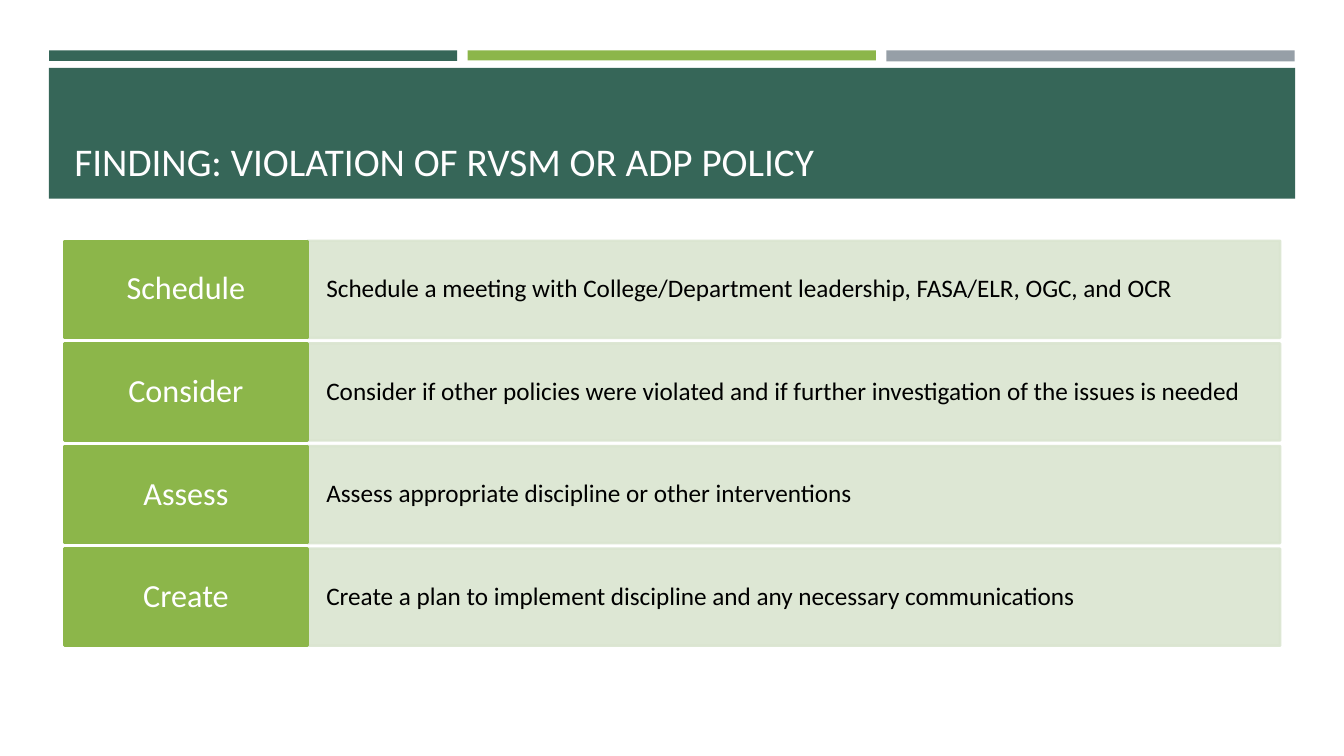
from pptx import Presentation
from pptx.dml.color import RGBColor
from pptx.enum.shapes import MSO_SHAPE
from pptx.enum.text import MSO_ANCHOR, PP_ALIGN
from pptx.oxml.ns import qn
from pptx.util import Pt
from lxml import etree

RECT = MSO_SHAPE.RECTANGLE
MIDDLE, BOTTOM = MSO_ANCHOR.MIDDLE, MSO_ANCHOR.BOTTOM
LEFT, CENTER = PP_ALIGN.LEFT, PP_ALIGN.CENTER

FONT = "Calibri"
DARK, GREEN, GRAY, PALE = "366658", "8CB64A", "969FA7", "DAE5D0"

TITLE = "FINDING: VIOLATION OF RVSM OR ADP POLICY"
STEPS = [
    ("Schedule", "Schedule a meeting with College/Department leadership, "
                 "FASA/ELR, OGC, and OCR"),
    ("Consider", "Consider if other policies were violated and if further "
                 "investigation of the issues is needed"),
    ("Assess", "Assess appropriate discipline or other interventions"),
    ("Create", "Create a plan to implement discipline and any necessary "
               "communications"),
]

TITLE_TEXT = dict(size=28, color="FFFEFF", align=LEFT, anchor=BOTTOM,
                  margins=(7.2, 3.6), spacing=0.9)
LABEL_TEXT = dict(size=23, color="FFFFFF", align=CENTER, anchor=MIDDLE,
                  margins=(9.4, 6.5), spacing=0.9)
DETAIL_TEXT = dict(size=18, color="000000", align=LEFT, anchor=MIDDLE,
                   margins=(13.5, 17.3), spacing=0.9)


def rgb(value):
    return RGBColor.from_string(value)


def add_box(slide, x, y, w, h, fill, outlined=False, opacity=100):
    s = slide.shapes.add_shape(RECT, Pt(x), Pt(y), Pt(w), Pt(h))
    s.shadow.inherit = False
    s.fill.solid()
    s.fill.fore_color.rgb = rgb(fill)
    if outlined:
        s.line.color.rgb = rgb(fill)
        s.line.width = Pt(1.75)
    else:
        s.line.fill.background()
    # Transparency of fill and outline
    if opacity < 100:
        for clr in s._element.spPr.iter(qn("a:srgbClr")):
            etree.SubElement(clr, qn("a:alpha"), val=str(opacity * 1000))
    return s


def set_text(shape, text, style):
    tf = shape.text_frame
    side, edge = style["margins"]
    frame = dict(word_wrap=True, vertical_anchor=style["anchor"],
                 margin_left=Pt(side), margin_right=Pt(side),
                 margin_top=Pt(edge), margin_bottom=Pt(edge))
    for name, value in frame.items():
        setattr(tf, name, value)
    p = tf.paragraphs[0]
    p.alignment = style["align"]
    p.line_spacing = style["spacing"]
    r = p.add_run()
    r.text = text
    for name, value in dict(name=FONT, size=Pt(style["size"])).items():
        setattr(r.font, name, value)
    r.font.color.rgb = rgb(style["color"])


def add_header(slide):
    # Three accent bars above the title band
    for i, (color, height) in enumerate([(DARK, 7.5), (GREEN, 7.2), (GRAY, 7.9)]):
        add_box(slide, 35 + i * 299.1, 36, 291.6, height, color)
    add_box(slide, 34.9, 48.5, 890.3, 93.5, DARK)
    title = slide.shapes.add_textbox(Pt(46.1), Pt(55.4), Pt(868.3), Pt(79.9))
    set_text(title, TITLE, TITLE_TEXT)


def add_step(slide, y, label, detail):
    panel = add_box(slide, 219.6, y, 694.8, 69.4, PALE, True, 90)
    set_text(panel, detail, DETAIL_TEXT)
    tag = add_box(slide, 46.1, y, 173.5, 69.4, GREEN, True)
    set_text(tag, label, LABEL_TEXT)


def main():
    prs = Presentation()
    prs.slide_width, prs.slide_height = Pt(960), Pt(540)
    slide = prs.slides.add_slide(prs.slide_layouts[6])
    add_header(slide)
    # Rows of steps
    for i, (label, detail) in enumerate(STEPS):
        add_step(slide, 172 + i * 73.3, label, detail)
    prs.save("out.pptx")


if __name__ == "__main__":
    main()
